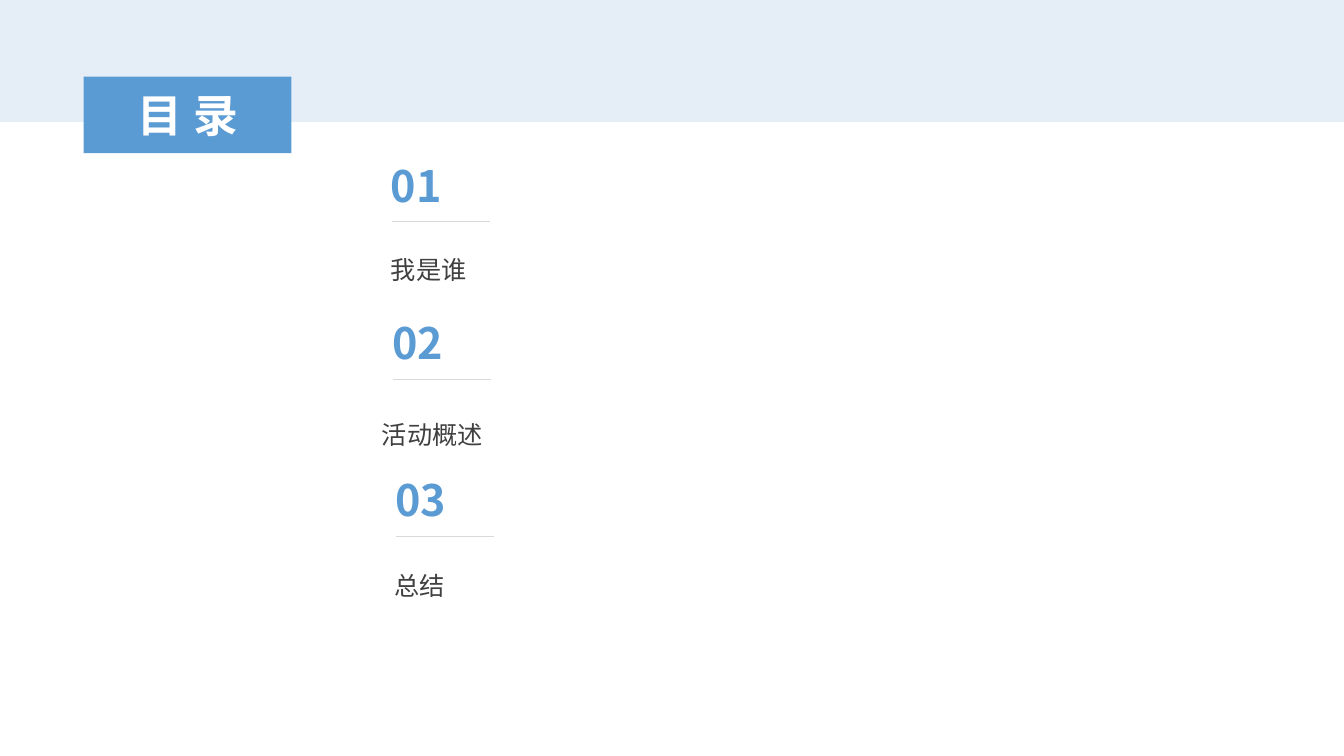
from lxml.etree import SubElement
from pptx import Presentation
from pptx.dml.color import RGBColor
from pptx.enum.shapes import MSO_CONNECTOR as Connector, MSO_SHAPE as Shape
from pptx.enum.text import MSO_ANCHOR as Anchor, MSO_AUTO_SIZE as AutoSize, PP_ALIGN as Align
from pptx.oxml.ns import qn
from pptx.util import Inches, Pt

FONT = "Noto Sans CJK SC"
COLORS = {
    "band": "E5EEF7",
    "accent": "5B9BD4",
    "text": "404040",
    "rule": "D9D9D9",
    "white": "FFFFFF",
}
NUMBER_TOP, ROW_STEP = 1.53, 1.56
# number left, label left, label top, label height, label line spacing, label
CHAPTERS = [
    (3.78, 3.78, 2.35, 0.54, 1.4, "我是谁"),
    (3.79, 3.69, 3.96, 0.56, 1.5, "活动概述"),
    (3.82, 3.81, 5.46, 0.56, 1.5, "总结"),
]


def color(name):
    return RGBColor.from_string(COLORS[name])


def set_all(target, values):
    for name, value in values.items():
        setattr(target, name, value)


class ContentsPage:
    def __init__(self, deck):
        self.page = deck.slides.add_slide(deck.slide_layouts[5])

    def style_text(self, box, text, size, ink, bold=False, spacing=0, frame=None, para=None):
        """Put one styled run in a box; spacing is between letters, in points."""
        set_all(box.text_frame, {"word_wrap": True, "auto_size": AutoSize.NONE, **(frame or {})})
        paragraph = box.text_frame.paragraphs[0]
        set_all(paragraph, para or {})
        span = paragraph.add_run()
        span.text = text
        set_all(span.font, {"name": FONT, "size": Pt(size), "bold": bold})
        span.font.color.rgb = color(ink)
        properties = span._r.get_or_add_rPr()
        SubElement(properties, qn("a:ea"), typeface=FONT)
        if spacing:
            properties.set("spc", str(spacing * 100))

    def band(self, left, top, width, height, fill):
        box = self.page.shapes.add_shape(Shape.RECTANGLE, *map(Inches, (left, top, width, height)))
        box.shadow.inherit = False
        box.fill.solid()
        box.fill.fore_color.rgb = color(fill)
        box.line.fill.background()

    def title(self, text, left, top, width, height):
        box = self.page.shapes.title
        places = map(Inches, (left, top, width, height))
        set_all(box, dict(zip(("left", "top", "width", "height"), places)))
        box.fill.solid()
        box.fill.fore_color.rgb = color("accent")
        self.style_text(box, text, 32, "white", bold=True, spacing=8,
                        frame={"vertical_anchor": Anchor.MIDDLE},
                        para={"alignment": Align.CENTER})
        # Bring the title in front of the band
        box.element.getparent().append(box.element)

    def text(self, text, left, top, width, height, **style):
        box = self.page.shapes.add_textbox(*map(Inches, (left, top, width, height)))
        self.style_text(box, text, **style)

    def rule(self, left, top, width):
        line = self.page.shapes.add_connector(
            Connector.STRAIGHT, *map(Inches, (left + width, top, left, top)))
        line.line.color.rgb = color("rule")
        line.line.width = Pt(0.5)
        SubElement(line.element.spPr, qn("a:effectLst"))


def main():
    deck = Presentation()
    set_all(deck, {"slide_width": Inches(13.33), "slide_height": Inches(7.5)})
    contents = ContentsPage(deck)
    contents.band(0, 0, 13.33, 1.21, "band")
    for index, (left, label_left, label_top, height, spacing, label) in enumerate(CHAPTERS):
        top = NUMBER_TOP + index * ROW_STEP
        contents.text(label, label_left, label_top, 2.9, height, size=18, ink="text",
                      para={"alignment": Align.JUSTIFY, "line_spacing": spacing,
                            "space_after": Pt(20)})
        contents.text(f"{index + 1:02}", left, top, 0.73, 0.69, size=30.8, ink="accent", bold=True)
        contents.rule(left + 0.11, top + 0.67, 0.97)
    contents.title("目录", 0.83, 0.76, 2.06, 0.76)
    deck.save("out.pptx")


if __name__ == "__main__":
    main()
